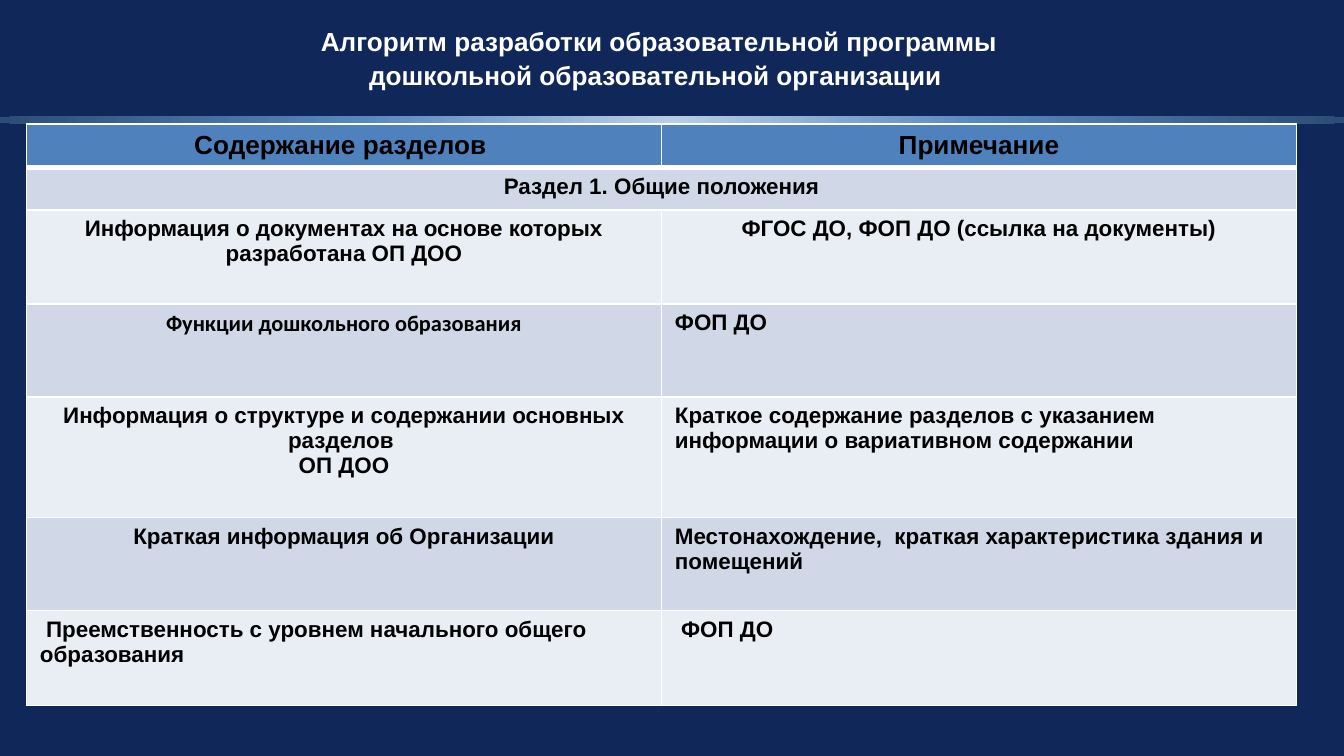
from dataclasses import dataclass

from pptx import Presentation
from pptx.dml.color import RGBColor
from pptx.enum.shapes import MSO_SHAPE
from pptx.enum.text import MSO_ANCHOR, PP_ALIGN
from pptx.oxml import parse_xml
from pptx.oxml.ns import nsdecls
from pptx.util import Pt

NAVY = RGBColor(0x10, 0x27, 0x5A)
WHITE = RGBColor(0xFF, 0xFF, 0xFF)
BLACK = RGBColor(0, 0, 0)
HEADER_BLUE = RGBColor(0x4F, 0x81, 0xBD)
BAND_DARK = RGBColor(0xD0, 0xD8, 0xE8)
BAND_LIGHT = RGBColor(0xE9, 0xED, 0xF4)
STRIPE_STOPS = (
    (0, RGBColor(0xB9, 0xCD, 0xE5)),
    (46, RGBColor(0x58, 0x87, 0xC0)),
    (100, RGBColor(0x2C, 0x4D, 0x75)),
)

CENTER, LEFT = PP_ALIGN.CENTER, PP_ALIGN.LEFT


@dataclass
class Entry:
    text: str
    align: PP_ALIGN = CENTER
    font: str = "Arial"


@dataclass
class Row:
    height: float
    entries: tuple[Entry, ...]


ROWS = (
    Row(23.5, (Entry("Содержание разделов "), Entry("Примечание"))),
    Row(22.5, (Entry("Раздел 1. Общие положения"),)),
    Row(50.4, (Entry("Информация о документах на основе которых разработана ОП ДОО"),
               Entry("ФГОС ДО, ФОП ДО (ссылка на документы)"))),
    Row(49.8, (Entry("Функции дошкольного образования", font="Calibri"),
               Entry("ФОП ДО", LEFT))),
    Row(64.8, (Entry("Информация о структуре и содержании основных разделов \nОП ДОО"),
               Entry("Краткое содержание разделов с указанием информации "
                     "о вариативном содержании", LEFT))),
    Row(49.8, (Entry("Краткая информация об Организации"),
               Entry("Местонахождение,  краткая характеристика здания и помещений", LEFT))),
    Row(50.9, (Entry(" Преемственность с уровнем начального общего образования", LEFT),
               Entry(" ФОП ДО", LEFT))),
)
COLUMN_WIDTH = 340.2


def format_text(frame, entry: Entry, size: float, color: RGBColor) -> None:
    """Write an entry into a text frame and format every paragraph."""
    frame.text = entry.text
    values = {"name": entry.font, "size": Pt(size), "bold": True}
    for para in frame.paragraphs:
        para.alignment = entry.align
        for span in para.runs:
            for name, value in values.items():
                setattr(span.font, name, value)
            span.font.color.rgb = color


def set_borders(cell, bottom: float) -> None:
    """Give a cell white borders, 1 pt except for the bottom one."""
    properties = cell._tc.get_or_add_tcPr()
    widths = {"lnL": 1, "lnR": 1, "lnT": 1, "lnB": bottom}
    for index, (tag, width) in enumerate(widths.items()):
        properties.insert(index, parse_xml(
            f'<a:{tag} {nsdecls("a")} w="{Pt(width)}"><a:solidFill>'
            f'<a:srgbClr val="{WHITE}"/></a:solidFill></a:{tag}>'))


def add_stripe(page) -> None:
    """Draw the thin band that glows in the middle."""
    stripe = page.shapes.add_shape(MSO_SHAPE.RECTANGLE, 0, Pt(62.6), Pt(720), Pt(3.6))
    stripe.shadow.inherit = False
    stripe.line.fill.background()
    stripe.fill.background()
    stops = "".join(f'<a:gs pos="{position * 1000}"><a:srgbClr val="{color}"/></a:gs>'
                    for position, color in STRIPE_STOPS)
    gradient = parse_xml(
        f'<a:gradFill {nsdecls("a")} rotWithShape="1"><a:gsLst>{stops}</a:gsLst>'
        '<a:path path="circle"><a:fillToRect l="50000" t="130000" r="50000" b="-30000"/>'
        '</a:path></a:gradFill>')
    properties = stripe._element.spPr
    properties.replace(properties.find("{*}noFill"), gradient)


def add_title(page) -> None:
    box = page.shapes.title
    bounds = {"left": 133.2, "top": 10.1, "width": 439.9, "height": 41}
    for name, value in bounds.items():
        setattr(box, name, Pt(value))
    frame = box.text_frame
    frame.word_wrap = True
    frame.vertical_anchor = MSO_ANCHOR.MIDDLE
    format_text(frame, Entry("Алгоритм разработки образовательной программы "
                             "дошкольной образовательной организации "), 14, WHITE)
    frame.paragraphs[0].line_spacing = 1.07


def add_sections_table(page) -> None:
    table = page.shapes.add_table(
        len(ROWS), 2, Pt(14.2), Pt(66.4), Pt(2 * COLUMN_WIDTH),
        Pt(sum(row.height for row in ROWS))).table
    table.horz_banding = False
    for column in table.columns:
        column.width = Pt(COLUMN_WIDTH)
    for number, row in enumerate(ROWS):
        table.rows[number].height = Pt(row.height)
        is_header = number == 0
        band = BAND_DARK if number % 2 else BAND_LIGHT
        for index in range(2):
            cell = table.cell(number, index)
            cell.fill.solid()
            cell.fill.fore_color.rgb = HEADER_BLUE if is_header else band
            set_borders(cell, 3 if is_header else 1)
        for index, entry in enumerate(row.entries):
            format_text(table.cell(number, index).text_frame, entry,
                        14 if is_header else 12, BLACK)
        # A single entry spans both columns
        if len(row.entries) == 1:
            table.cell(number, 0).merge(table.cell(number, 1))


def main() -> None:
    deck = Presentation()
    deck.slide_width, deck.slide_height = Pt(720), Pt(405)
    page = deck.slides.add_slide(deck.slide_layouts[5])
    page.background.fill.solid()
    page.background.fill.fore_color.rgb = NAVY
    add_stripe(page)
    add_title(page)
    add_sections_table(page)
    deck.save("out.pptx")


if __name__ == "__main__":
    main()
